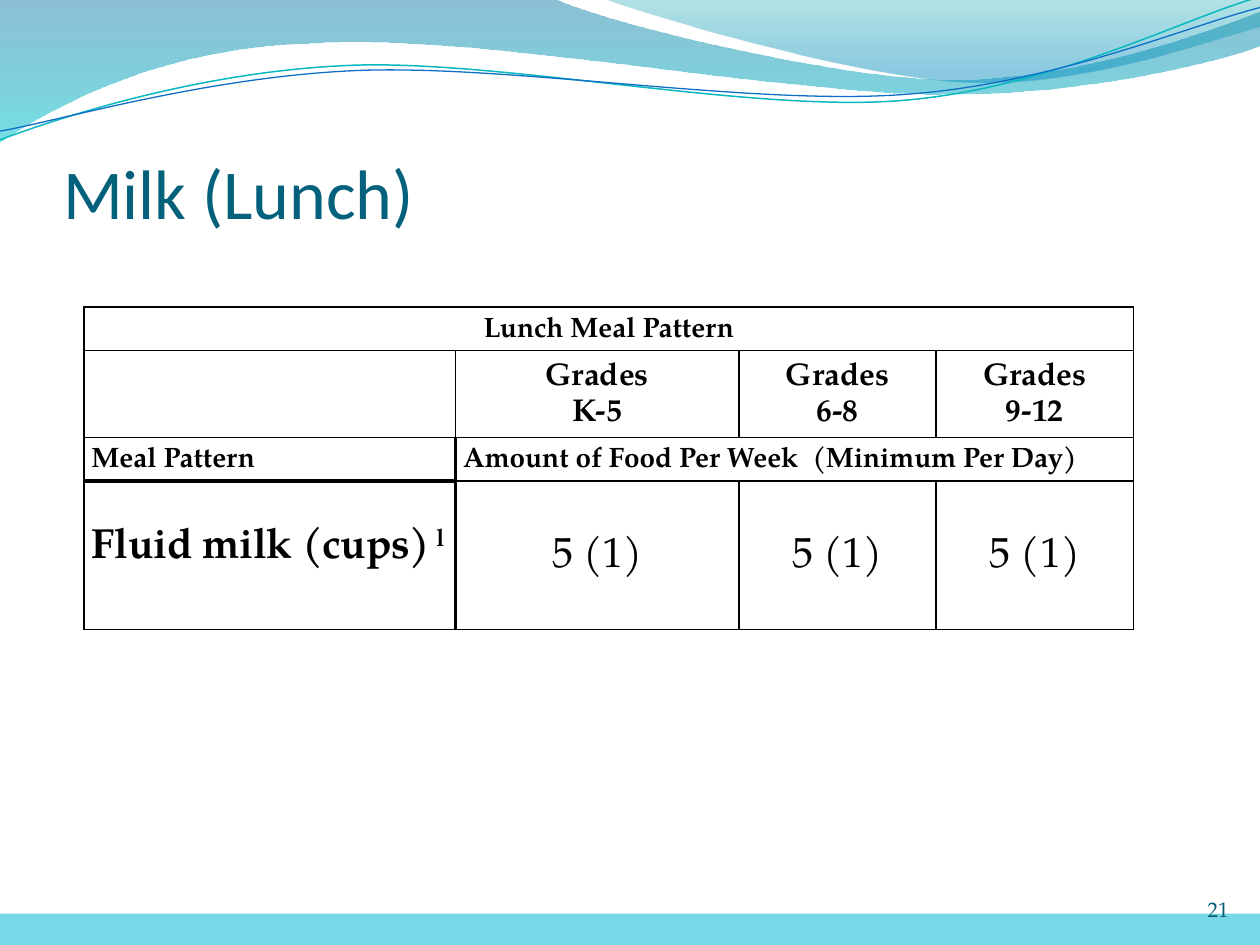
from lxml import etree
from pptx import Presentation
from pptx.dml.color import RGBColor
from pptx.enum.shapes import MSO_SHAPE
from pptx.enum.text import MSO_ANCHOR, MSO_AUTO_SIZE, PP_ALIGN
from pptx.oxml import parse_xml
from pptx.oxml.ns import nsdecls, qn
from pptx.util import Pt

RECT = MSO_SHAPE.RECTANGLE
TOP, MIDDLE, BOTTOM = MSO_ANCHOR.TOP, MSO_ANCHOR.MIDDLE, MSO_ANCHOR.BOTTOM
LEFT, CENTER, RIGHT = PP_ALIGN.LEFT, PP_ALIGN.CENTER, PP_ALIGN.RIGHT
SERIF = "TeX Gyre Pagella"


def rgb(color):
    return RGBColor.from_string(color)


def add_run(p, text, size, font, color, bold=False):
    r = p.add_run()
    r.text = text
    r.font.size, r.font.name, r.font.bold = Pt(size), font, bold
    r.font.color.rgb = rgb(color)
    return r


prs = Presentation()
prs.slide_width, prs.slide_height = Pt(720), Pt(540)
s = prs.slides.add_slide(prs.slide_layouts[5])

# Header waves: start point, then lines (2 numbers) or Bezier curves (6 numbers);
# gradient stops are position, colour, opacity in percent
waves = [
    ((0, 0),
     [(316.8, -0.7), (342.7, 12.2, 478.1, 45.4, 545.8, 45.4),
      (614.2, 45.4, 689.8, 18.7, 720, 6.5), (720.7, 25.9),
      (707.8, 31.7, 626.4, 54.7, 537.1, 54), (447.8, 54, 275, 20.2, 185, 24.5),
      (92.9, 25.9, 33.1, 59.8, -0.7, 81.4), (0, 0)],
     [(0, "0074A1", 45), (1, "00C6CF", 55)], None),
    ((344.9, -0.7),
     [(366.5, 7.9, 491, 44.6, 553.7, 46.8), (616.3, 49.7, 691.9, 23, 720, 15.1),
      (720, 0), (344.9, -0.7)],
     [(0, "00A1A9", 30), (0.8, "008BBF", 45)], None),
    ((0, 79.9),
     [(34.6, 67, 113.8, 41, 199.4, 37.4), (284.4, 33.8, 427, 64.1, 513.4, 57.6),
      (599.8, 51.1, 675.4, 10.8, 718.6, -1.4)],
     None, ("0AB8BF", 0.85)),
    ((0, 74.9),
     [(33.8, 69.1, 118.1, 43.9, 203.8, 40.3), (290.2, 36.7, 429.8, 60.5, 516.2, 54),
      (601.9, 48.2, 677.5, 15.1, 720, 4.3)],
     None, ("0F6FC6", 0.75)),
]
for start, segments, stops, line in waves:
    points = [(Pt(x), Pt(y)) for seg in segments for x, y in zip(seg[::2], seg[1::2])]
    builder = s.shapes.build_freeform(Pt(start[0]), Pt(start[1]))
    builder.add_line_segments(points, close=bool(stops))
    sp = builder.convert_to_shape()
    sp.shadow.inherit = False
    # Join each three points of a curve into one Bezier segment
    nodes = iter(list(sp.element.spPr.iter(qn("a:lnTo"))))
    for seg in segments:
        group = [next(nodes) for _ in seg[::2]]
        if len(group) == 3:
            curve = etree.Element(qn("a:cubicBezTo"))
            group[0].addprevious(curve)
            for node in group:
                curve.append(node[0])
                node.getparent().remove(node)
    if stops:
        sp.line.fill.background()
        sp.fill.gradient()
        sp.fill.gradient_angle = 270
        for stop, (position, color, _) in zip(sp.fill.gradient_stops, stops):
            stop.position = position
            stop.color.rgb = rgb(color)
        for clr, (_, _, opacity) in zip(sp.element.spPr.iter(qn("a:srgbClr")), stops):
            etree.SubElement(clr, qn("a:alpha")).set("val", str(opacity * 1000))
    else:
        sp.fill.background()
        sp.line.color.rgb = rgb(line[0])
        sp.line.width = Pt(line[1])

# Title
sp = s.shapes.title
sp.left, sp.top, sp.width, sp.height = Pt(36), Pt(66), Pt(653.75), Pt(67.5)
tf = sp.text_frame
tf.auto_size = MSO_AUTO_SIZE.NONE
tf.vertical_anchor = BOTTOM
tf.margin_left = tf.margin_right = tf.margin_bottom = 0
p = tf.paragraphs[0]
p.alignment = LEFT
add_run(p, "Milk (Lunch)", 40, "Calibri", "04617B")

# Meal pattern table
col_widths = [212.4, 162, 112.4, 113]
row_heights = [24.75, 49.75, 25, 84.75]
table = s.shapes.add_table(4, 4, Pt(48), Pt(175.5),
                           Pt(sum(col_widths)), Pt(sum(row_heights))).table
table.first_row = table.horz_banding = False
for col, width in zip(table.columns, col_widths):
    col.width = Pt(width)
for row, height in zip(table.rows, row_heights):
    row.height = Pt(height)
table.cell(0, 0).merge(table.cell(0, 3))
table.cell(2, 1).merge(table.cell(2, 3))

# Cell borders, fill and margins
thick = {(2, 0): "RB", (2, 1): "L", (3, 0): "RT", (3, 1): "L"}
for i in range(4):
    for j in range(4):
        cell = table.cell(i, j)
        tcPr = cell._tc.get_or_add_tcPr()
        for side in "LRTB":
            width = Pt(2.25 if side in thick.get((i, j), "") else 1)
            tcPr.append(parse_xml(
                f'<a:ln{side} {nsdecls("a")} w="{width}"><a:solidFill>'
                f'<a:srgbClr val="000000"/></a:solidFill></a:ln{side}>'))
        cell.fill.solid()
        cell.fill.fore_color.rgb = rgb("FFFFFF")
        cell.margin_left = cell.margin_right = Pt(4.3)
        cell.margin_top = cell.margin_bottom = 0
        cell.vertical_anchor = MIDDLE

# Cell text: \n starts a paragraph, \v breaks the line
texts = [
    (0, 0, "Lunch Meal Pattern", 16, True, CENTER),
    (1, 1, "Grades\vK-5", 18, True, CENTER),
    (1, 2, "Grades\n6-8", 18, True, CENTER),
    (1, 3, "Grades\n9-12", 18, True, CENTER),
    (2, 0, "Meal Pattern", 16, True, LEFT),
    (2, 1, "Amount of Food Per Week  (Minimum Per Day)", 16, True, LEFT),
    (3, 0, "Fluid milk (cups)", 24, True, LEFT),
] + [(3, j, "5 (1)", 24, False, CENTER) for j in (1, 2, 3)]
for i, j, text, size, bold, align in texts:
    tf = table.cell(i, j).text_frame
    for n, paragraph in enumerate(text.split("\n")):
        p = tf.add_paragraph() if n else tf.paragraphs[0]
        p.alignment, p.line_spacing = align, 1.15
        for k, piece in enumerate(paragraph.split("\v")):
            if k:
                p.add_line_break()
            add_run(p, piece, size, SERIF, "000000", bold)

# Footnote mark on the milk row, tightened to stay on one line
cell = table.cell(3, 0)
cell.vertical_anchor, cell.margin_top, cell.margin_right = TOP, Pt(23.5), Pt(2)
p = cell.text_frame.paragraphs[0]
p.runs[0].font._element.set("spc", "-20")
r = add_run(p, " l", 24, SERIF, "000000", True)
r.font._element.set("baseline", "30000")

# Footer band
sp = s.shapes.add_shape(RECT, 0, Pt(522), Pt(720), Pt(18))
sp.shadow.inherit = False
sp.fill.solid()
sp.fill.fore_color.rgb = rgb("77D9E8")
sp.line.fill.background()

# Slide number
tf = s.shapes.add_textbox(Pt(642), Pt(498.25), Pt(60), Pt(28.75)).text_frame
tf.word_wrap = True
tf.vertical_anchor = BOTTOM
tf.margin_left = tf.margin_right = tf.margin_top = tf.margin_bottom = 0
p = tf.paragraphs[0]
p.alignment = RIGHT
add_run(p, "21", 12, SERIF, "045D75")

prs.save("out.pptx")
